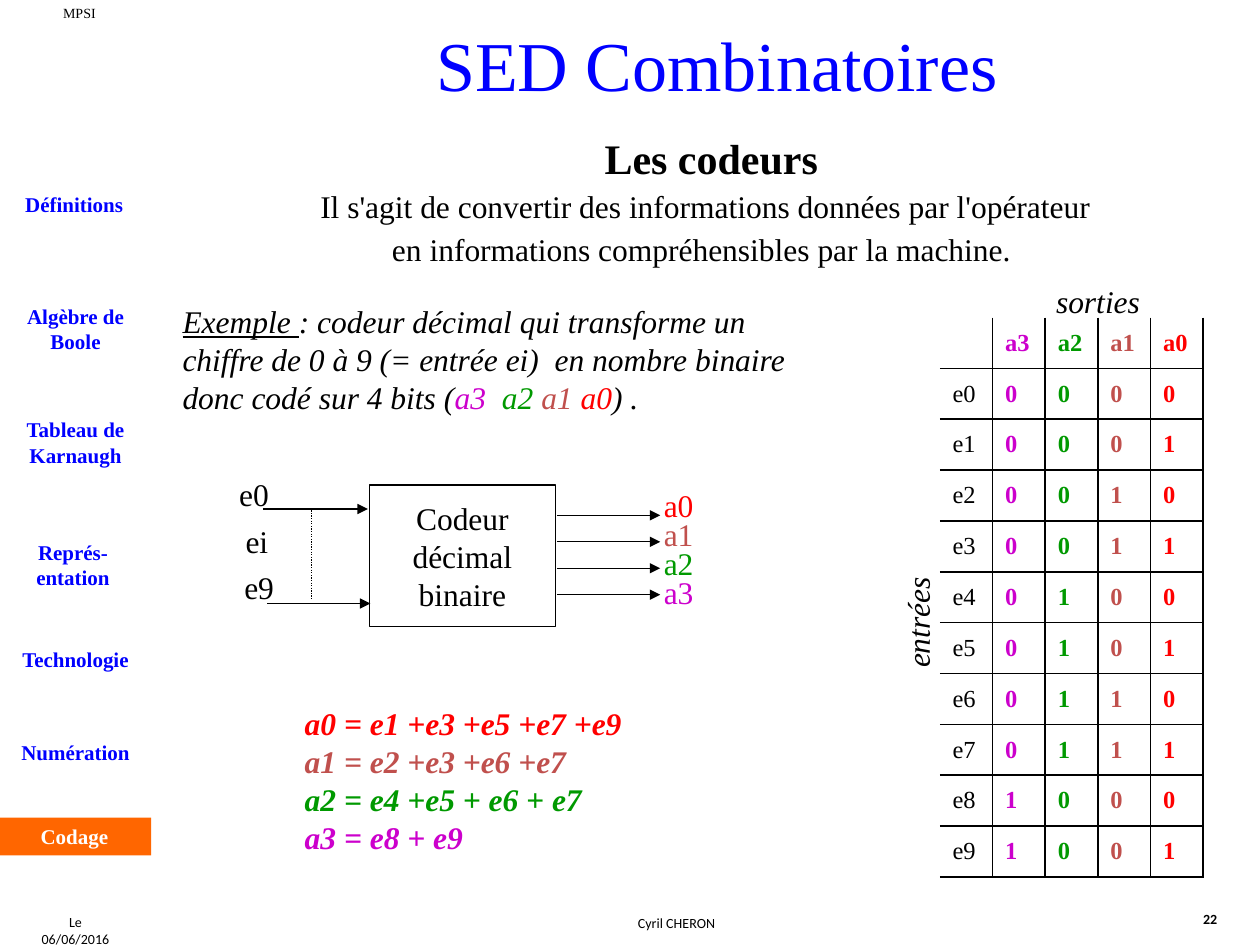
"""Build the slide on decimal-to-binary encoders."""
from dataclasses import dataclass

import lxml.etree
import pptx
import pptx.dml.color
import pptx.enum.dml
import pptx.enum.shapes
import pptx.enum.text
import pptx.oxml.ns
import pptx.util

Inches = pptx.util.Inches
Pt = pptx.util.Pt
RGBColor = pptx.dml.color.RGBColor
PP_ALIGN = pptx.enum.text.PP_ALIGN
MSO_ANCHOR = pptx.enum.text.MSO_ANCHOR
qn = pptx.oxml.ns.qn

BLACK = RGBColor(0x00, 0x00, 0x00)
WHITE = RGBColor(0xFF, 0xFF, 0xFF)
BLUE = RGBColor(0x00, 0x00, 0xFF)
ORANGE = RGBColor(0xFF, 0x66, 0x00)
RED = RGBColor(0xFF, 0x00, 0x00)
BRICK = RGBColor(0xC0, 0x50, 0x4D)
GREEN = RGBColor(0x00, 0x99, 0x00)
PURPLE = RGBColor(0xCC, 0x00, 0xCC)
SERIF = "Times New Roman"
SANS = "Calibri"


@dataclass(frozen=True)
class Run:
    text: str
    color: RGBColor = BLACK
    underline: bool = False


@dataclass(frozen=True)
class Box:
    left: float
    top: float
    width: float
    height: float

    def lengths(self) -> tuple:
        return tuple(Inches(v) for v in (self.left, self.top, self.width, self.height))


@dataclass(frozen=True)
class Topic:
    text: str
    left: float
    top: float
    height: float


@dataclass(frozen=True)
class OutputBit:
    name: str
    color: RGBColor
    formula: str


TOPICS = [
    Topic("Définitions", 0.01, 1.47, 0.3),
    Topic("Algèbre de Boole", 0.02, 2.36, 0.5),
    Topic("Tableau de Karnaugh", 0.02, 3.26, 0.5),
    Topic("Représ-entation", 0, 4.23, 0.5),
    Topic("Technologie", 0.02, 5.08, 0.3),
    Topic("Numération", 0.02, 5.82, 0.3),
]
BITS = [
    OutputBit("a0", RED, "e1 +e3 +e5 +e7 +e9"),
    OutputBit("a1", BRICK, "e2 +e3 +e6 +e7"),
    OutputBit("a2", GREEN, "e4 +e5 + e6 + e7"),
    OutputBit("a3", PURPLE, "e8 + e9"),
]


def write(frame, *paragraphs: str | list[Run], size: float = 18, color: RGBColor = BLACK,
          font: str = SERIF, bold: bool = False, italic: bool = False,
          align: PP_ALIGN = PP_ALIGN.LEFT, line_spacing: float | None = None,
          space_before: float = 0) -> None:
    """Fill a text frame with paragraphs in one format."""
    for index, content in enumerate(paragraphs):
        paragraph = frame.paragraphs[0] if index == 0 else frame.add_paragraph()
        paragraph.alignment = align
        if line_spacing:
            paragraph.line_spacing = line_spacing
        if index and space_before:
            paragraph.space_before = Pt(space_before)
        for part in [Run(content, color)] if isinstance(content, str) else content:
            run = paragraph.add_run()
            run.text = part.text
            run.font.name, run.font.size = font, Pt(size)
            run.font.bold, run.font.italic = bold, italic
            run.font.underline = part.underline
            run.font.color.rgb = part.color


def add_text(slide, box: Box, *paragraphs: str | list[Run], wrap: bool = True,
             side_inset: float = 0.1, rotation: float = 0, **style) -> None:
    """Place a text box."""
    label = slide.shapes.add_textbox(*box.lengths())
    label.rotation = rotation
    frame = label.text_frame
    frame.word_wrap = wrap
    frame.margin_left = frame.margin_right = Inches(side_inset)
    write(frame, *paragraphs, **style)


def add_block(slide, box: Box, *paragraphs: str, fill: RGBColor | None = None,
              line: RGBColor | None = None, **style) -> None:
    """Place a rectangle with centred text."""
    block = slide.shapes.add_shape(pptx.enum.shapes.MSO_SHAPE.RECTANGLE, *box.lengths())
    block.shadow.inherit = False
    if fill is None:
        block.fill.background()
    else:
        block.fill.solid()
        block.fill.fore_color.rgb = fill
    if line is None:
        block.line.fill.background()
    else:
        block.line.color.rgb = line
        block.line.width = Pt(0.75)
    block.text_frame.vertical_anchor = MSO_ANCHOR.MIDDLE
    write(block.text_frame, *paragraphs, align=PP_ALIGN.CENTER, **style)


def add_wire(slide, x1: float, y1: float, x2: float, y2: float, dotted: bool = False) -> None:
    """Draw an arrow, or a dotted line without a head."""
    wire = slide.shapes.add_connector(pptx.enum.shapes.MSO_CONNECTOR.STRAIGHT,
                                      Inches(x1), Inches(y1), Inches(x2), Inches(y2))
    wire.line.color.rgb = BLACK
    wire.line.width = Pt(0.75)
    if dotted:
        wire.line.dash_style = pptx.enum.dml.MSO_LINE.ROUND_DOT
    else:
        lxml.etree.SubElement(wire.line._get_or_add_ln(), qn("a:tailEnd"), type="triangle")
    lxml.etree.SubElement(wire._element.spPr, qn("a:effectLst"))


def set_borders(cell, hidden: set[str]) -> None:
    """Rule the sides of a cell except the hidden ones."""
    properties = cell._tc.get_or_add_tcPr()
    for side in "LRTB":
        border = lxml.etree.SubElement(properties, qn(f"a:ln{side}"), w=str(Pt(1)))
        if side in hidden:
            lxml.etree.SubElement(border, qn("a:noFill"))
        else:
            solid = lxml.etree.SubElement(border, qn("a:solidFill"))
            lxml.etree.SubElement(solid, qn("a:srgbClr"), val=str(BLACK))


def add_truth_table(slide, box: Box) -> None:
    """Tabulate the four output bits of each decimal input."""
    rows = [["", *(bit.name for bit in reversed(BITS))]]
    rows += [[f"e{digit}", *f"{digit:04b}"] for digit in range(10)]
    colors = [BLACK, *(bit.color for bit in reversed(BITS))]
    table = slide.shapes.add_table(len(rows), len(colors), *box.lengths()).table
    table.first_row = table.horz_banding = False
    for r, values in enumerate(rows):
        table.rows[r].height = Inches(box.height / len(rows))
        for c, value in enumerate(values):
            cell = table.cell(r, c)
            set_borders(cell, ({"T"} if r == 0 else set()) | ({"L"} if c == 0 else set()))
            cell.fill.background()
            cell.vertical_anchor = MSO_ANCHOR.MIDDLE
            write(cell.text_frame, value, size=14, color=colors[c], bold=c > 0)


def add_encoder(slide) -> None:
    """Draw the encoder block with its inputs and outputs."""
    add_block(slide, Box(2.93, 3.85, 1.48, 1.12), "Codeur", "décimal", "binaire", line=BLACK)
    add_wire(slide, 2.09, 4.04, 2.92, 4.04)
    add_wire(slide, 2.12, 4.79, 2.94, 4.79)
    add_wire(slide, 2.47, 4.05, 2.47, 4.76, dotted=True)
    for name, left, top in (("e0", 1.8, 3.72), ("ei", 1.85, 4.09), ("e9", 1.84, 4.46)):
        add_text(slide, Box(left, top, 0.78, 0.4), name)
    for index, bit in enumerate(BITS):
        wire_y = 4.09 + 0.21 * index
        add_wire(slide, 4.42, wire_y, 5.24, wire_y)
        add_text(slide, Box(5.17, 3.81 + 0.23 * index, 0.44, 0.4), bit.name,
                 color=bit.color, wrap=False)


def main() -> None:
    """Assemble and save the slide."""
    deck = pptx.Presentation()
    deck.slide_width, deck.slide_height = Inches(10), Inches(7.5)
    slide = deck.slides.add_slide(deck.slide_layouts[6])
    center = PP_ALIGN.CENTER

    add_text(slide, Box(0.17, 7.2, 0.86, 0.24), "Le 06/06/2016", size=8, font=SANS, align=center, wrap=False)
    add_text(slide, Box(1.25, 7.21, 8.24, 0.24), "Cyril CHERON", size=8, font=SANS, align=center)
    add_text(slide, Box(9.45, 7.18, 0.39, 0.24), "22", size=8, font=SANS, bold=True, wrap=False)
    add_block(slide, Box(0.32, 0.04, 0.62, 0.13), "MPSI", size=8, fill=WHITE)
    for topic in TOPICS:
        add_text(slide, Box(topic.left, topic.top, 1.16, topic.height), topic.text, size=12,
                 color=BLUE, bold=True, align=center, side_inset=0.04)
    add_block(slide, Box(-0.02, 6.49, 1.22, 0.3), "Codage", size=12, color=WHITE, bold=True, fill=ORANGE)

    add_text(slide, Box(2.43, 0.12, 6.52, 0.77), "SED Combinatoires", size=40, color=BLUE, align=center)
    add_text(slide, Box(1.39, 1, 8.51, 0.5), "Les codeurs", size=24, bold=True, align=center)
    add_text(slide, Box(1.35, 1.52, 8.5, 0.67),
             "Il s'agit de convertir des informations données par l'opérateur",
             "en informations compréhensibles par la machine. ",
             align=center, line_spacing=0.7, space_before=9)
    add_text(slide, Box(1.35, 2.35, 5.25, 1), [
        Run("Exemple ", underline=True),
        Run(": codeur décimal qui transforme un chiffre de 0 à 9 (= entrée ei)  en nombre binaire "
            "donc codé sur 4 bits ("),
        Run("a3  ", PURPLE), Run("a2 ", GREEN), Run("a1 ", BRICK), Run("a0", RED), Run(") ."),
    ], italic=True)
    add_encoder(slide)
    add_text(slide, Box(2.32, 5.54, 2.78, 1.3),
             *([Run(f"{bit.name} = {bit.formula}", bit.color)] for bit in BITS),
             bold=True, italic=True, wrap=False)

    add_truth_table(slide, Box(7.46, 2.52, 2.09, 4.44))
    add_text(slide, Box(7.88, 2.19, 1.67, 0.4), "sorties", italic=True, align=center)
    add_text(slide, Box(5.24, 4.74, 4.08, 0.4), "entrées", italic=True, align=center, rotation=270)
    deck.save("out.pptx")


if __name__ == "__main__":
    main()
